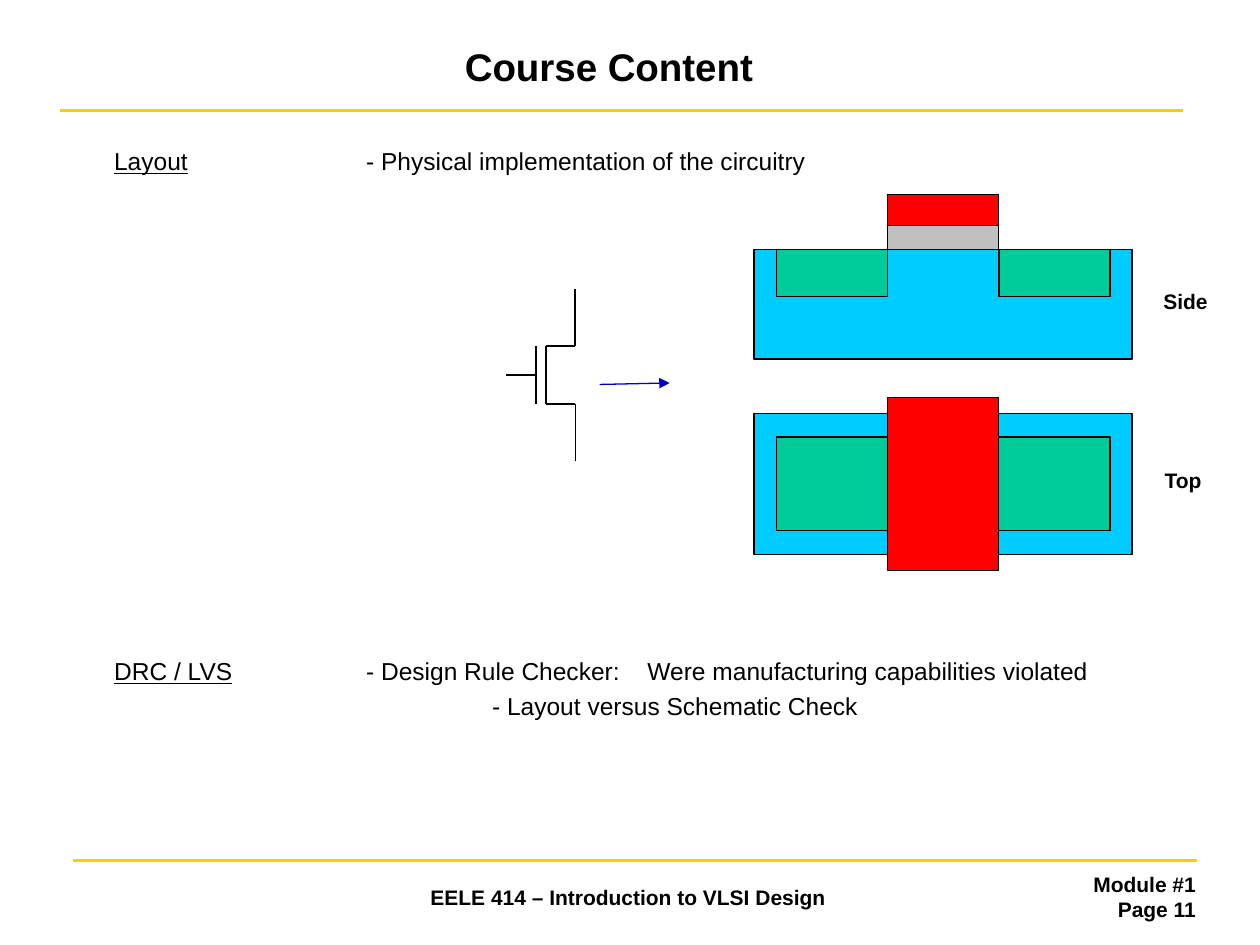
from lxml.etree import SubElement
from pptx import Presentation
from pptx.dml.color import RGBColor
from pptx.enum.shapes import MSO_CONNECTOR as Connector, MSO_SHAPE as Shape
from pptx.enum.text import MSO_ANCHOR as Anchor, MSO_AUTO_SIZE as AutoSize, PP_ALIGN as Align
from pptx.oxml.ns import qn
from pptx.util import Cm, Pt

BLACK = RGBColor(0x00, 0x00, 0x00)
GOLD = RGBColor(0xFF, 0xCC, 0x00)
BLUE = RGBColor(0x00, 0x00, 0xCC)
SUBSTRATE = RGBColor(0x00, 0xCC, 0xFF)
DIFFUSION = RGBColor(0x00, 0xCC, 0x99)
OXIDE = RGBColor(0xC0, 0xC0, 0xC0)
GATE = RGBColor(0xFF, 0x00, 0x00)

TITLE = {"name": "Arial", "size": Pt(22), "bold": True}
BODY = {"name": "Arial", "size": Pt(14), "bold": False}
LABEL = {"name": "Arial", "size": Pt(12), "bold": True}


def add_text(paragraph, text, formats):
    for index, part in enumerate(text.split("\v")):
        if index:
            paragraph.add_line_break()
        run = paragraph.add_run()
        run.text = part
        run.font.color.rgb = BLACK
        for name, value in formats.items():
            setattr(run.font, name, value)
    return run


def add_line(shapes, points, color, width):
    line = shapes.add_connector(Connector.STRAIGHT, *[Cm(point) for point in points])
    line.line.color.rgb = color
    line.line.width = Pt(width)
    SubElement(line._element.spPr, qn("a:effectLst"))
    return line


presentation = Presentation()
presentation.slide_width = Cm(25.4)
presentation.slide_height = Cm(19.05)
slide = presentation.slides.add_slide(presentation.slide_layouts[1])
shapes = slide.shapes

add_line(shapes, (1.2, 2.23, 23.85, 2.23), GOLD, 2)
add_line(shapes, (1.47, 17.35, 24.12, 17.35), GOLD, 2)

title = shapes.title
title.left, title.top, title.width, title.height = Cm(1.48), Cm(0.64), Cm(21.59), Cm(1.4)
title.text_frame.auto_size = AutoSize.NONE
title.text_frame.vertical_anchor = Anchor.MIDDLE
title.text_frame.paragraphs[0].alignment = Align.CENTER
add_text(title.text_frame.paragraphs[0], "Course Content", TITLE)

body = slide.placeholders[1]
body.left, body.top, body.width, body.height = Cm(1.09), Cm(2.82), Cm(23.5), Cm(14.1)
frame = body.text_frame
frame.auto_size = AutoSize.NONE
frame.margin_left = Cm(1.21)

topics = [
    ("Layout", "\t\t\t- Physical implementation of the circuitry", "", 0, 0),
    ("DRC / LVS", "\t\t\t- Design Rule Checker:", "Were manufacturing capabilities violated", 274.5, 0),
    ("", "- Layout versus Schematic Check", "", 3.4, 7.62),
]
for index, (heading, detail, question, space, margin) in enumerate(topics):
    paragraph = frame.add_paragraph() if index else frame.paragraphs[0]
    paragraph.space_before = Pt(space)
    properties = paragraph._p.get_or_add_pPr()
    properties.set("marL", str(Cm(margin)))
    properties.set("indent", "0")
    SubElement(properties, qn("a:buNone"))
    if heading:
        add_text(paragraph, heading, BODY | {"underline": True})
    add_text(paragraph, detail, BODY)
    if question:
        gap = add_text(paragraph, " ", BODY)
        gap._r.get_or_add_rPr().set("spc", "1170")
        add_text(paragraph, question, BODY)

layers = [
    (15.2, 5.03, 7.62, 2.21, SUBSTRATE),
    (15.65, 5.03, 2.24, 0.95, DIFFUSION),
    (20.14, 5.03, 2.24, 0.95, DIFFUSION),
    (17.89, 4.55, 2.24, 0.48, OXIDE),
    (17.89, 3.92, 2.24, 0.63, GATE),
    (15.2, 8.34, 7.62, 2.84, SUBSTRATE),
    (15.65, 8.81, 6.73, 1.89, DIFFUSION),
    (17.89, 8.02, 2.24, 3.48, GATE),
]
for left, top, width, height, color in layers:
    layer = shapes.add_shape(Shape.RECTANGLE, Cm(left), Cm(top), Cm(width), Cm(height))
    layer.shadow.inherit = False
    layer.fill.solid()
    layer.fill.fore_color.rgb = color
    layer.line.color.rgb = BLACK
    layer.line.width = Pt(0.75)

captions = [
    ("Module #1\vPage 11", 20.4, 17.43, 3.96, 1.27, Align.RIGHT, Anchor.TOP, 0.25, 0.13),
    ("EELE 414 – Introduction to VLSI Design", 6.8, 17.7, 11.73, 0.81, Align.CENTER, Anchor.TOP, 0.25, 0.13),
    ("Top", 23.1, 9.42, 1.5, 0.51, Align.CENTER, Anchor.MIDDLE, 0, 0),
    ("Side", 23.4, 5.82, 1, 0.51, Align.CENTER, Anchor.MIDDLE, 0, 0),
]
for text, left, top, width, height, alignment, anchor, side, edge in captions:
    frame = shapes.add_textbox(Cm(left), Cm(top), Cm(width), Cm(height)).text_frame
    frame.word_wrap = True
    frame.vertical_anchor = anchor
    frame.margin_left = frame.margin_right = Cm(side)
    frame.margin_top = frame.margin_bottom = Cm(edge)
    frame.paragraphs[0].alignment = alignment
    add_text(frame.paragraphs[0], text, LABEL)

transistor = shapes.add_group_shape()
for points in [
    (10.8, 6.98, 10.8, 8.15),
    (11, 6.98, 11, 8.15),
    (10.2, 7.56, 10.8, 7.56),
    (11, 6.98, 11.59, 6.98),
    (11, 8.14, 11.6, 8.14),
    (11.6, 8.14, 11.6, 9.3),
    (11.59, 5.82, 11.59, 6.98),
]:
    add_line(transistor.shapes, points, BLACK, 1)

arrow = add_line(shapes, (12.09, 7.75, 13.5, 7.72), BLUE, 0.75)
SubElement(arrow.line._get_or_add_ln(), qn("a:tailEnd"), type="triangle")

presentation.save("out.pptx")
